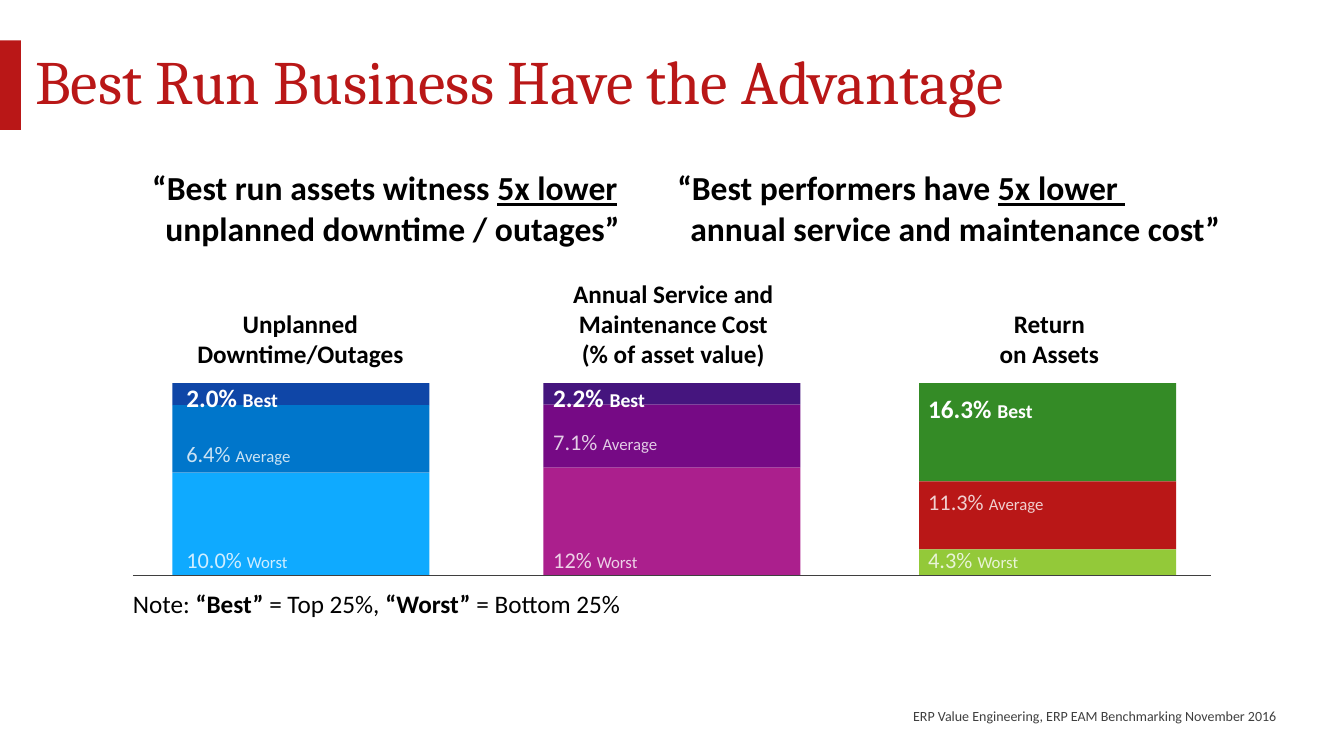
"""Build the slide comparing best, average and worst asset performance."""
from lxml import etree
from pptx import Presentation
from pptx.dml.color import RGBColor
from pptx.enum.shapes import MSO_CONNECTOR, MSO_SHAPE
from pptx.enum.text import MSO_ANCHOR, MSO_AUTO_SIZE, PP_ALIGN
from pptx.oxml.ns import qn
from pptx.util import Pt

RECTANGLE, STRAIGHT = MSO_SHAPE.RECTANGLE, MSO_CONNECTOR.STRAIGHT
TOP, MIDDLE, BOTTOM = MSO_ANCHOR.TOP, MSO_ANCHOR.MIDDLE, MSO_ANCHOR.BOTTOM
LEFT, CENTER = PP_ALIGN.LEFT, PP_ALIGN.CENTER
NO_FIT, GROW = MSO_AUTO_SIZE.NONE, MSO_AUTO_SIZE.SHAPE_TO_FIT_TEXT
BAR_TOP, BAR_BOTTOM, BAR_WIDTH = 273.6, 411.1, 183.6


def write(box, spans, size=18, font="Calibri", color="000000", bold=False, align=LEFT,
          anchor=TOP, insets=(0, 0), fit=GROW, wrap=True, hanging=0):
    """Fill a box with spans of text, each with its own format changes."""
    frame = box.text_frame
    frame.word_wrap, frame.auto_size, frame.vertical_anchor = wrap, fit, anchor
    frame.margin_left = frame.margin_right = Pt(insets[0])
    frame.margin_top = frame.margin_bottom = Pt(insets[1])
    para = frame.paragraphs[0]
    para.alignment = align
    if hanging:
        properties = para._p.get_or_add_pPr()
        properties.set("marL", str(Pt(hanging)))
        properties.set("indent", str(-Pt(hanging)))
    for text, changes in spans:
        for number, line in enumerate(text.split("\n")):
            if number:
                para.add_line_break()
            if not line:
                continue
            span = para.add_run()
            span.text = line
            span.font.name = font
            span.font.size = Pt(changes.get("size", size))
            span.font.bold = changes.get("bold", bold)
            span.font.underline = changes.get("underline", False)
            span.font.color.rgb = RGBColor.from_string(color)
            if "alpha" in changes:
                fill = span._r.find(".//" + qn("a:srgbClr"))
                etree.SubElement(fill, qn("a:alpha")).set("val", str(changes["alpha"] * 1000))
    return para


def add_bar(left, top, width, height, color):
    """Draw a plain filled rectangle."""
    bar = slide.shapes.add_shape(RECTANGLE, Pt(left), Pt(top), Pt(width), Pt(height))
    bar.shadow.inherit = False
    bar.fill.solid()
    bar.fill.fore_color.rgb = RGBColor.from_string(color)
    bar.line.fill.background()


deck = Presentation()
deck.slide_width, deck.slide_height = Pt(960), Pt(540)
slide = deck.slides.add_slide(deck.slide_layouts[5])

add_bar(0, 28.8, 15, 64, "B91717")
title = slide.shapes.title
title.left, title.top, title.width, title.height = Pt(18), Pt(29.5), Pt(882.7), Pt(61.2)
heading = write(title, [("Best Run Business Have the Advantage", {})], size=44, font="Cambria",
                color="B91717", anchor=MIDDLE, insets=(7.2, 3.6), fit=NO_FIT)
heading.line_spacing = 0.9

quotes = [
    (108.7, 361.4, [("“Best run assets witness ", {}), ("5x lower", {"underline": True}),
                    (" unplanned downtime / outages”", {})]),
    (483.8, 397.4, [("“Best performers have ", {}), ("5x lower \n", {"underline": True}),
                    ("annual service and maintenance cost”", {})]),
]
for left, width, spans in quotes:
    box = slide.shapes.add_textbox(Pt(left), Pt(115.9), Pt(width), Pt(65.5))
    write(box, spans, size=24, bold=True, insets=(0, 3.6), hanging=9.36)

captions = [
    (108.7, 219.6, 211.7, 43.9, "Unplanned\nDowntime/Outages"),
    (371.5, 198, 218.9, 65.5, "Annual Service and Maintenance Cost\n(% of asset value)"),
    (640.1, 219.6, 218.9, 43.9, "Return\non Assets"),
]
for left, top, width, height, text in captions:
    box = slide.shapes.add_textbox(Pt(left), Pt(top), Pt(width), Pt(height))
    write(box, [(text, {})], bold=True, align=CENTER, anchor=BOTTOM)

columns = [
    (123.1, 126, [("0F46A7", 289.4, "2.0% ", 269.3, 80.6),
                  ("0076CB", 337.7, "6.4% ", 311, 90.7),
                  ("0FAAFF", BAR_BOTTOM, "10.0% ", 386.6, 88.6)]),
    (388.1, 388.1, [("45157E", 289.1, "2.2% ", 269.3, 80.6),
                    ("760A85", 334.1, "7.1% ", 302.4, 90.7),
                    ("AB1F8D", BAR_BOTTOM, "12% ", 386.6, 76.3)]),
    (656.6, 655.9, [("348B26", 343.9, "16.3% ", 277.2, 90),
                    ("B91717", 392.4, "11.3% ", 344.9, 98.6),
                    ("93C939", BAR_BOTTOM, "4.3% ", 386.6, 80.6)]),
]
ranks = [("Best", 18, 14, 28.8, True, {}),
         ("Average", 16, 12, 26.6, False, {"alpha": 80}),
         ("Worst", 16, 12, 26.6, False, {"alpha": 80})]
for bar_left, label_left, segments in columns:
    top = BAR_TOP
    for color, bottom, *_ in segments:
        add_bar(bar_left, top, BAR_WIDTH, bottom - top, color)
        top = bottom
    for segment, (rank, size, rank_size, height, bold, fade) in zip(segments, ranks):
        value, label_top, width = segment[2:]
        box = slide.shapes.add_textbox(Pt(label_left), Pt(label_top), Pt(width), Pt(height))
        write(box, [(value, fade), (rank, {"size": rank_size, **fade})], size=size,
              color="FFFFFF", bold=bold, insets=(7.2, 3.6), wrap=False)

baseline = slide.shapes.add_connector(STRAIGHT, Pt(95), Pt(BAR_BOTTOM), Pt(864.7), Pt(BAR_BOTTOM))
baseline.line.color.rgb = RGBColor.from_string("3F3F3F")
baseline.line.width = Pt(0.75)
etree.SubElement(baseline._element.spPr, qn("a:effectLst"))

note = slide.shapes.add_textbox(Pt(95), Pt(420.5), Pt(355), Pt(21.6))
write(note, [("Note: ", {}), ("“Best”", {"bold": True}), (" = Top 25%, ", {}),
             ("“Worst” ", {"bold": True}), ("= Bottom 25%", {})], wrap=False)

credit = slide.shapes.add_textbox(Pt(652.3), Pt(501.8), Pt(299.5), Pt(19.4))
write(credit, [("ERP Value Engineering, ERP EAM Benchmarking November 2016", {})], size=10,
      color="3F3F3F", anchor=BOTTOM, insets=(0, 3.6))

deck.save("out.pptx")
